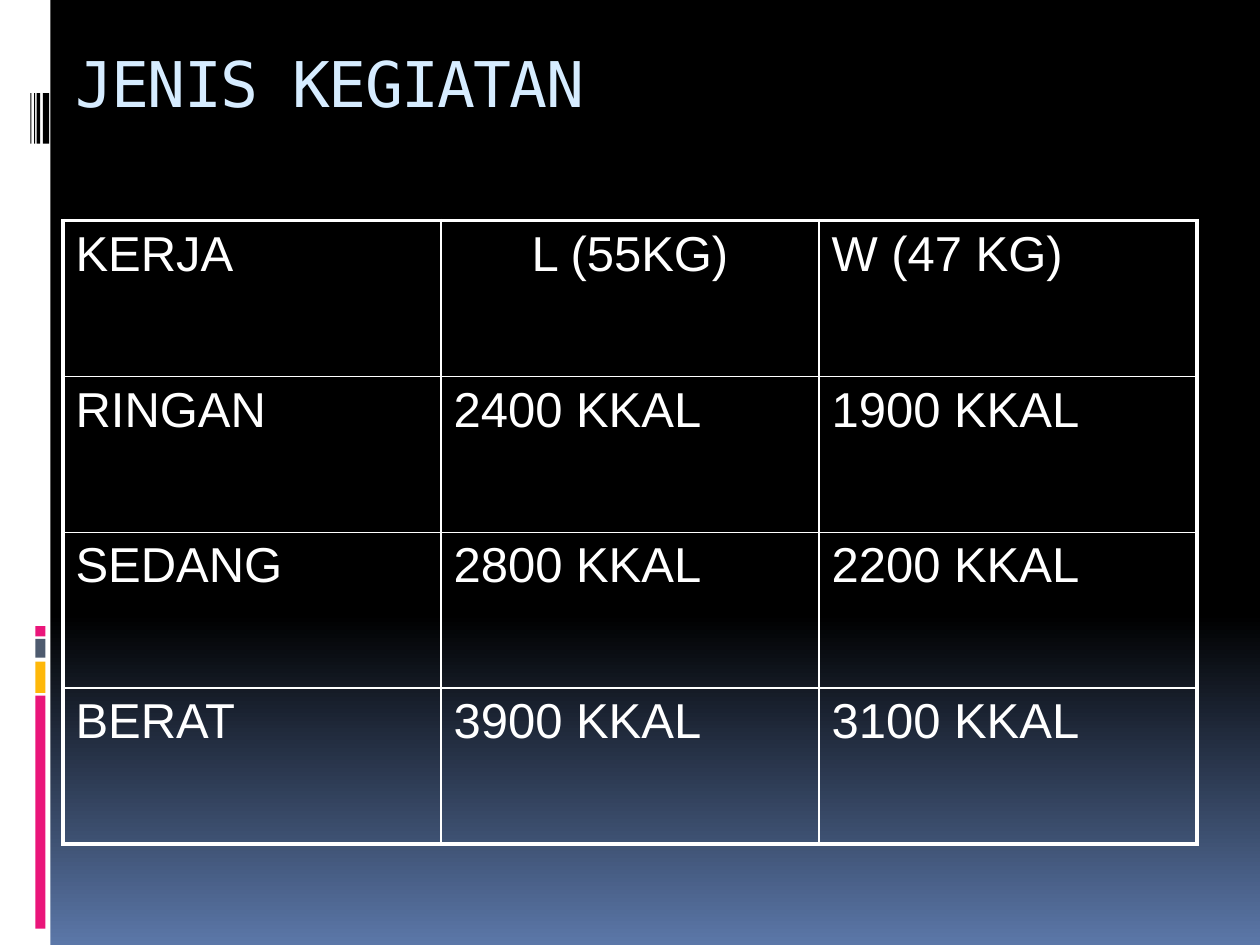
import copy

import pptx
import pptx.dml.color
import pptx.enum.shapes
import pptx.enum.text
import pptx.oxml
import pptx.oxml.ns
import pptx.util
from pptx.util import Inches

THEME = {
    "white": "FFFFFF", "black": "000000", "blue": "5B77A8", "title": "D6ECFF",
    "pink": "EA157A", "amber": "FEB80A", "slate": "4E5B6F",
    "title_font": "DejaVu Sans Mono", "title_size": 36,
    "table_font": "Arial", "table_size": 28,
    "outer_line": 2.25, "inner_line": 1,
}


def color(name):
    return pptx.dml.color.RGBColor.from_string(THEME[name])


def add_border(cell, side, width):
    """Draw one cell side (L, R, T or B) as a solid white line, width in points."""
    cell._tc.get_or_add_tcPr().append(pptx.oxml.parse_xml(
        f'<a:ln{side} {pptx.oxml.ns.nsdecls("a")} w="{pptx.util.Pt(width)}">'
        f'<a:solidFill><a:srgbClr val="{THEME["white"]}"/></a:solidFill></a:ln{side}>'))


deck = pptx.Presentation()
deck.slide_width, deck.slide_height = Inches(10), Inches(7.5)
page = deck.slides.add_slide(deck.slide_layouts[5])

# Background: black down to 65 %, then fading to blue
backdrop = page.background.fill
backdrop.gradient()
backdrop.gradient_angle = 270
first_stop, last_stop = backdrop.gradient_stops
first_stop.color.rgb = color("black")
last_stop.color.rgb = color("blue")
stop = page._element.xpath(".//a:gs")[0]
middle_stop = copy.deepcopy(stop)
middle_stop.set("pos", "65000")
stop.addnext(middle_stop)

# Side strip with its coloured blocks and black bars
strip_parts = [
    (0, 0, 0.4, 7.5, "white"),
    (0.28, 5.52, 0.08, 1.85, "pink"),
    (0.28, 5.25, 0.08, 0.25, "amber"),
    (0.28, 5.07, 0.08, 0.15, "slate"),
    (0.28, 4.97, 0.08, 0.08, "pink"),
]
bars = [(0.34, 0.05), (0.29, 0.03), (0.27, 0.01), (0.24, 0.01)]
strip_parts += [(left, 0.74, width, 0.4, "black") for left, width in bars]
for left, top, width, height, fill in strip_parts:
    block = page.shapes.add_shape(
        pptx.enum.shapes.MSO_SHAPE.RECTANGLE,
        Inches(left), Inches(top), Inches(width), Inches(height))
    block.shadow.inherit = False
    block.fill.solid()
    block.fill.fore_color.rgb = color(fill)
    block.line.fill.background()

# Title
title = page.shapes.title
title.left, title.top = Inches(0.5), Inches(0.3)
title.width, title.height = Inches(9), Inches(1.25)
title.text_frame.text = "JENIS KEGIATAN"
title.text_frame.vertical_anchor = pptx.enum.text.MSO_ANCHOR.TOP
para = title.text_frame.paragraphs[0]
para.alignment = pptx.enum.text.PP_ALIGN.LEFT
span = para.runs[0]
span.font.name = THEME["title_font"]
span.font.size = pptx.util.Pt(THEME["title_size"])
span.font.color.rgb = color("title")
span._r.get_or_add_rPr().set("spc", "-100")

# Energy needs by kind of work
rows = [
    ["KERJA", "L (55KG)", "W (47 KG)"],
    ["RINGAN", "2400 KKAL", "1900 KKAL"],
    ["SEDANG", "2800 KKAL", "2200 KKAL"],
    ["BERAT", "3900 KKAL", "3100 KKAL"],
]
last_row, last_column = len(rows) - 1, len(rows[0]) - 1
table = page.shapes.add_table(
    len(rows), len(rows[0]), Inches(0.5), Inches(1.75), Inches(9), Inches(4.95)).table
table.first_row = False
table.horz_banding = False
for r, texts in enumerate(rows):
    for c, text in enumerate(texts):
        cell = table.cell(r, c)
        cell.text_frame.text = text
        para = cell.text_frame.paragraphs[0]
        if (r, c) == (0, 1):
            para.alignment = pptx.enum.text.PP_ALIGN.CENTER
        span = para.runs[0]
        span.font.name = THEME["table_font"]
        span.font.size = pptx.util.Pt(THEME["table_size"])
        span.font.color.rgb = color("white")
        outer_sides = {"L": c == 0, "R": c == last_column, "T": r == 0, "B": r == last_row}
        for side, is_outer in outer_sides.items():
            add_border(cell, side, THEME["outer_line" if is_outer else "inner_line"])
        cell.fill.background()

deck.save("out.pptx")
